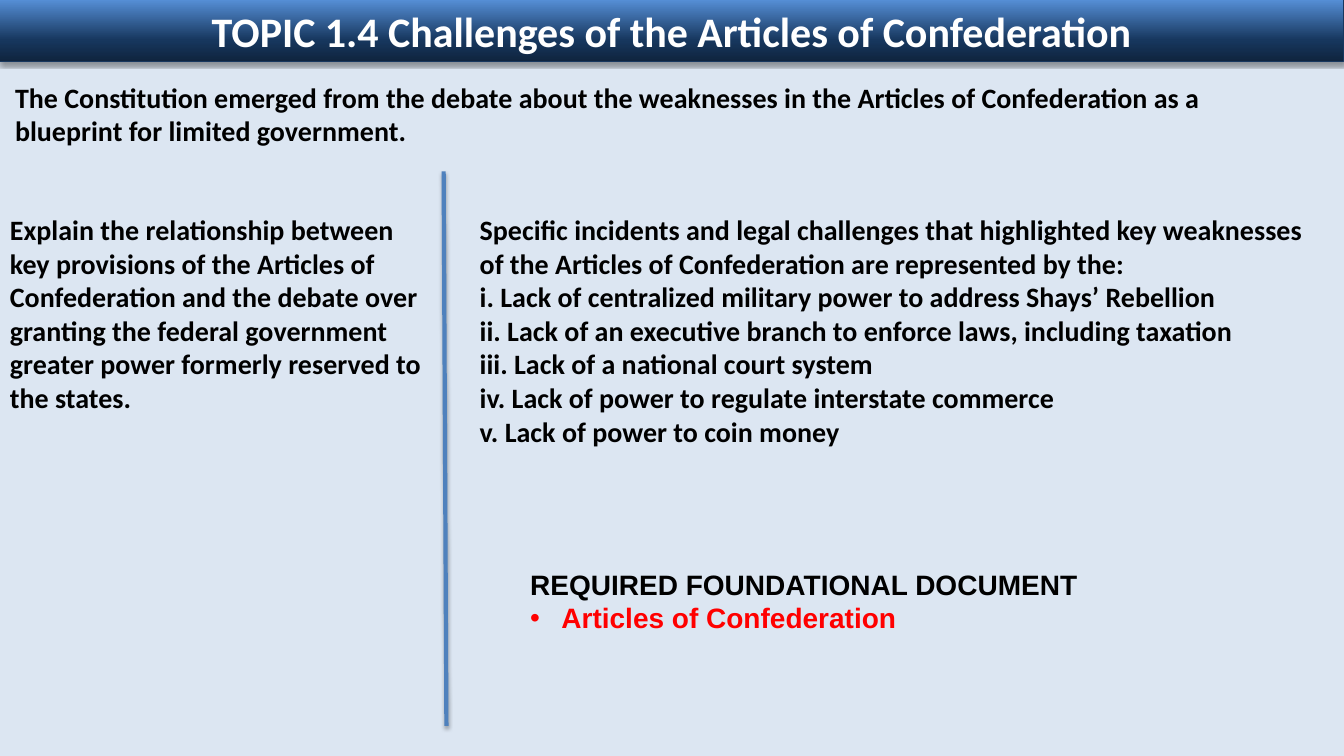
from copy import deepcopy

from lxml import etree
from pptx import Presentation
from pptx.dml.color import RGBColor
from pptx.enum import shapes, text
from pptx.oxml import ns
from pptx.util import Cm, Pt

TITLE = "TOPIC 1.4 Challenges of the Articles of Confederation"
INTRO = ["The Constitution emerged from the debate about the weaknesses in the Articles of "
         "Confederation as a blueprint for limited government."]
OBJECTIVE = ["Explain the relationship between key provisions of the Articles of Confederation and "
             "the debate over granting the federal government greater power formerly reserved to "
             "the states."]
WEAKNESSES = [
    "Specific incidents and legal challenges that highlighted key weaknesses of the Articles of "
    "Confederation are represented by the:",
    "i. Lack of centralized military power to address Shays’ Rebellion",
    "ii. Lack of an executive branch to enforce laws, including taxation",
    "iii. Lack of a national court system",
    "iv. Lack of power to regulate interstate commerce",
    "v. Lack of power to coin money",
]
DOCUMENT = ["REQUIRED FOUNDATIONAL DOCUMENT", "Articles of Confederation"]

COLORS = {"background": "DCE6F2", "banner_line": "17375E", "divider": "4F81BD",
          "title": "FFFFFF", "body": "000000", "document": "FF0000", "shadow": "000000"}
BANNER_STOPS = [(0, "0F243E"), (0.35, "17375E"), (1, "558ED5")]

WIDTH, HEIGHT = 33.87, 19.05
BANNER_HEIGHT = 1.55
COLUMN_TOP, DIVIDER_X = 5.23, 11.18
BODY = [
    (WEAKNESSES, (11.84, COLUMN_TOP, 21.44, 6.25), "Calibri"),
    (INTRO, (0.13, 1.9, 33.2, 1.96), "Calibri"),
    (OBJECTIVE, (0, COLUMN_TOP, DIVIDER_X, 5.38), "Calibri"),
    (DOCUMENT, (13.11, 14.17, 18.42, 1.96), "Arial"),
]


def rgb(name):
    return RGBColor.from_string(COLORS[name])


def style(paragraph, size, face, color):
    for run in paragraph.runs:
        run.font.size, run.font.name, run.font.bold = Pt(size), face, True
        run.font.color.rgb = rgb(color)


def add_shadow(properties, alpha, blur, distance):
    effects = properties.find(ns.qn("a:effectLst"))
    if effects is None:
        effects = etree.SubElement(properties, ns.qn("a:effectLst"))
    shadow = etree.SubElement(effects, ns.qn("a:outerShdw"), blurRad=str(Pt(blur)),
                              dist=str(Pt(distance)), dir="5400000", rotWithShape="0")
    shade = etree.SubElement(shadow, ns.qn("a:srgbClr"), val=COLORS["shadow"])
    etree.SubElement(shade, ns.qn("a:alpha"), val=str(alpha * 1000))


def add_banner(slide):
    banner = slide.shapes.add_shape(shapes.MSO_SHAPE.RECTANGLE, 0, 0, Cm(WIDTH), Cm(BANNER_HEIGHT))
    banner.fill.gradient()
    banner.fill.gradient_angle = 90
    stop_list = banner._element.spPr.find(".//" + ns.qn("a:gsLst"))
    stop_list.append(deepcopy(stop_list[-1]))
    for stop, (position, color) in zip(banner.fill.gradient_stops, BANNER_STOPS):
        stop.position = position
        stop.color.rgb = RGBColor.from_string(color)
    banner.line.color.rgb = rgb("banner_line")
    banner.line.width = Pt(0.75)
    banner.shadow.inherit = False
    add_shadow(banner._element.spPr, 38, 3.1, 1.6)
    banner.text_frame.text = TITLE
    banner.text_frame.word_wrap = True
    heading = banner.text_frame.paragraphs[0]
    heading.alignment = text.PP_ALIGN.CENTER
    style(heading, 30, "Calibri", "title")


def add_divider(slide):
    divider = slide.shapes.add_connector(shapes.MSO_CONNECTOR.STRAIGHT, Cm(DIVIDER_X), Cm(4.32),
                                         Cm(DIVIDER_X + 0.07), Cm(18.29))
    divider.line.color.rgb = rgb("divider")
    divider.line.width = Pt(3)
    add_shadow(divider._element.spPr, 35, 3.1, 1.8)


def add_body(slide, lines, box, face):
    frame = slide.shapes.add_textbox(*map(Cm, box)).text_frame
    frame.word_wrap = True
    frame.text = "\n".join(lines)
    for paragraph in frame.paragraphs:
        style(paragraph, 20, face, "body")
    return frame


def add_bullet(paragraph):
    properties = paragraph._p.get_or_add_pPr()
    properties.set("marL", str(Cm(0.79)))
    properties.set("indent", str(-Cm(0.79)))
    etree.SubElement(properties, ns.qn("a:buFont"), typeface="Arial")
    etree.SubElement(properties, ns.qn("a:buChar"), char="•")


def main():
    """Build the slide on the challenges of the Articles of Confederation."""
    deck = Presentation()
    deck.slide_width, deck.slide_height = Cm(WIDTH), Cm(HEIGHT)
    slide = deck.slides.add_slide(deck.slide_layouts[6])
    slide.background.fill.solid()
    slide.background.fill.fore_color.rgb = rgb("background")
    add_banner(slide)
    add_divider(slide)
    for lines, box, face in BODY:
        frame = add_body(slide, lines, box, face)
        if lines is DOCUMENT:
            add_bullet(frame.paragraphs[1])
            style(frame.paragraphs[1], 20, face, "document")
    deck.save("out.pptx")


if __name__ == "__main__":
    main()
